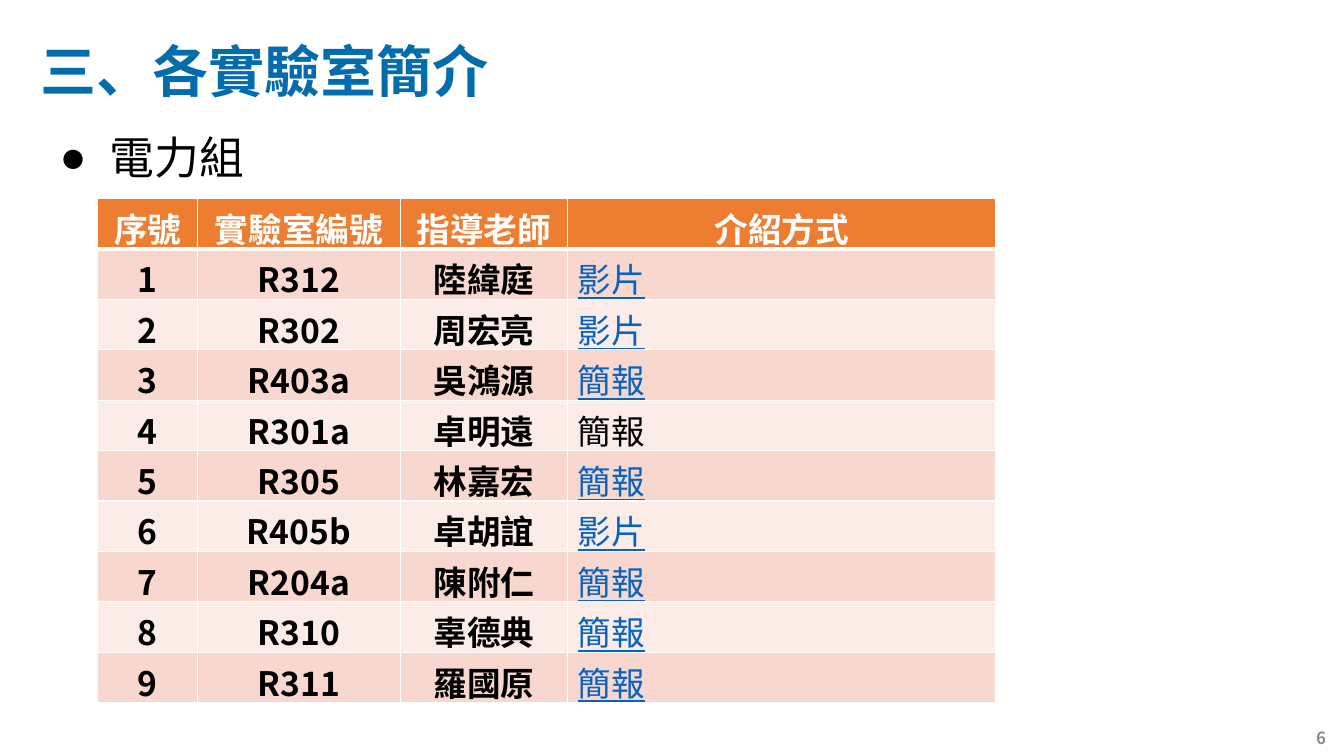
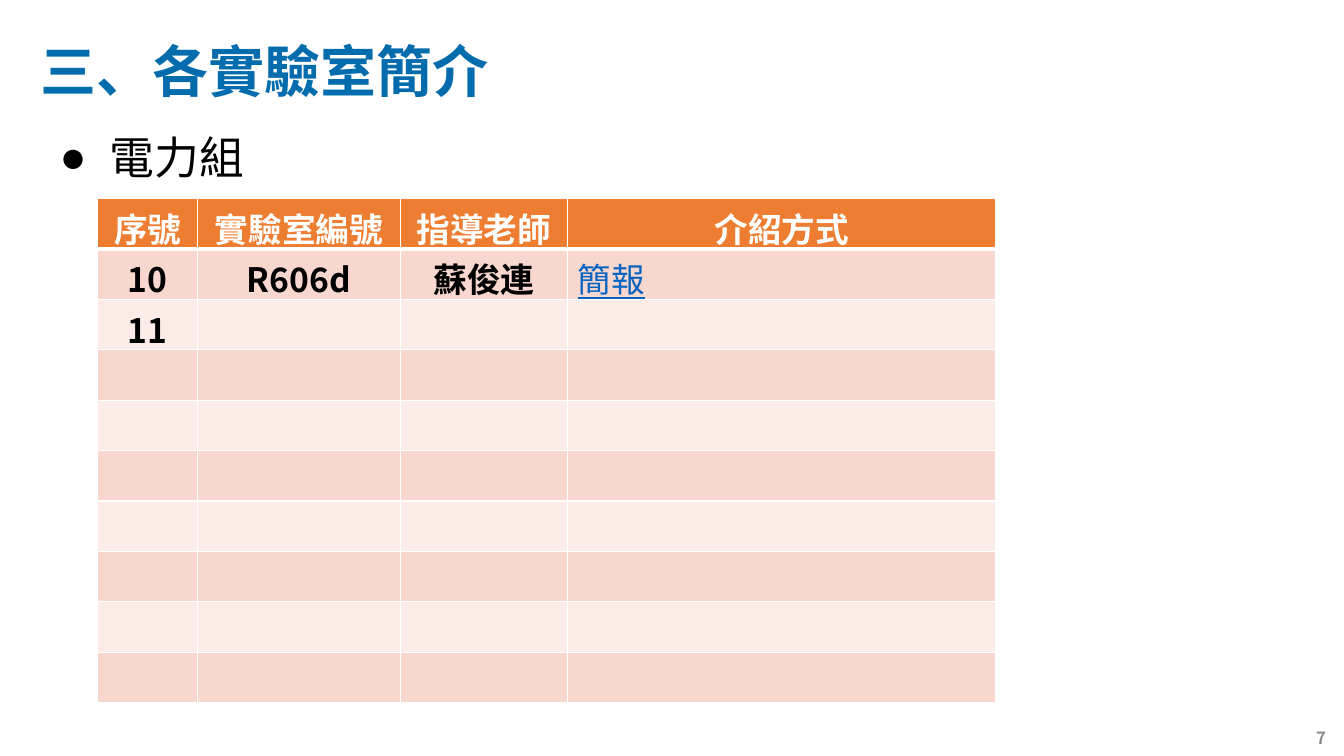
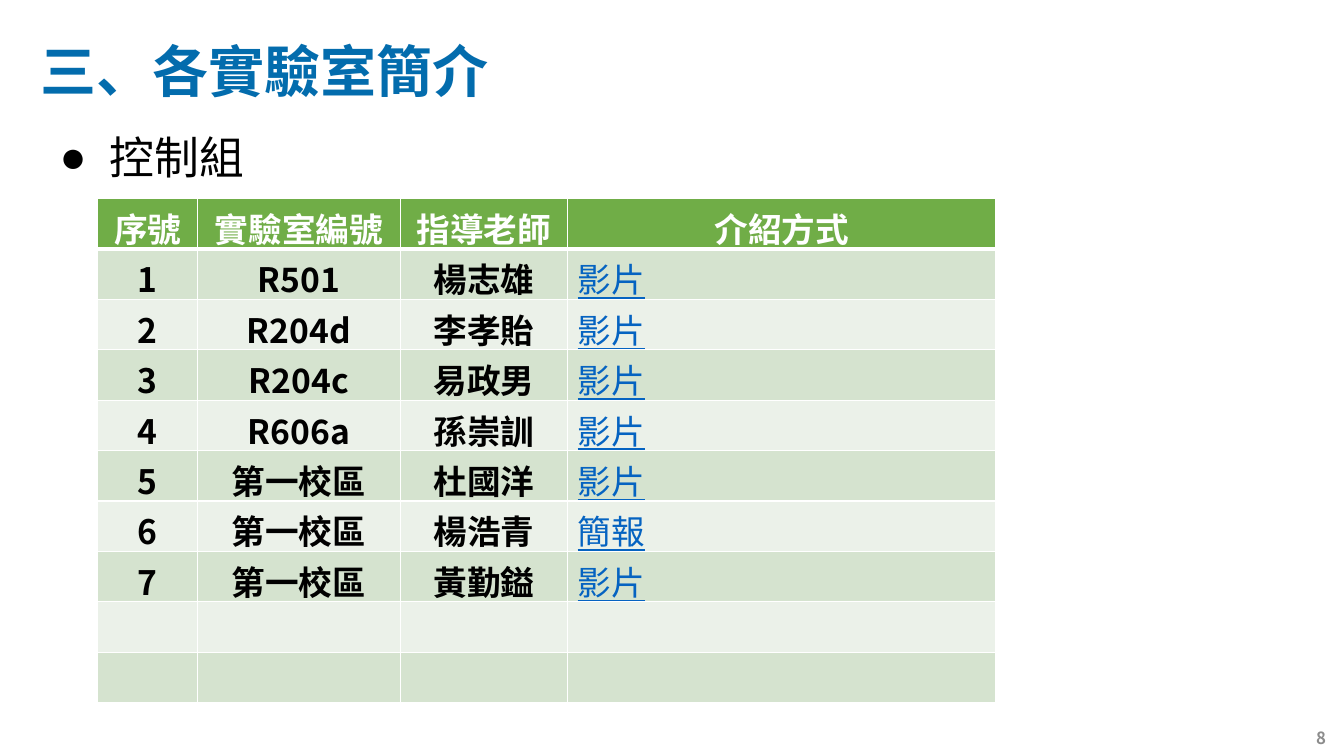
from dataclasses import dataclass

from lxml import etree
from pptx import Presentation
from pptx import util as u
from pptx.dml.color import RGBColor
from pptx.enum import text
from pptx.oxml.ns import qn


@dataclass(frozen=True)
class Theme:
    font: str = "Noto Sans CJK SC"
    title: str = "036CAD"
    ink: str = "000000"
    link: str = "0563C1"
    number: str = "8C8C8C"
    white: str = "FFFFFF"
    orange: tuple = ("ED7D31", "F8D7CE", "FCECE8")  # header, odd row, even row
    green: tuple = ("70AD47", "D5E3CF", "EBF1E9")
    title_size: int = 40
    group_size: int = 32
    table_size: int = 24
    number_size: int = 12


# Left, top, width, height in percent of the slide
TITLE_BOX = (2.25, -0.27, 35.48, 13.2)
GROUP_BOX = (3.68, 16.53, 19.28, 8.53)
TABLE_BOX = (7.28, 26.27, 66.84, 66.67)
NUMBER_BOX = (76.89, 94.93, 22.51, 5.33)
COLUMNS = (7.43, 15.08, 12.45, 31.88)
ROW_COUNT = 10

TITLE = "三、各實驗室簡介"
HEADER = ("序號", "實驗室編號", "指導老師", "介紹方式")
VIDEO, DECK = "影片", "簡報"
POWER = (
    ("R312", "陸緯庭", VIDEO), ("R302", "周宏亮", VIDEO),
    ("R403a", "吳鴻源", DECK), ("R301a", "卓明遠", DECK),
    ("R305", "林嘉宏", DECK), ("R405b", "卓胡誼", VIDEO),
    ("R204a", "陳附仁", DECK), ("R310", "辜德典", DECK),
    ("R311", "羅國原", DECK),
)
POWER_MORE = (("R606d", "蘇俊連", DECK), ("", "", ""))
CONTROL = (
    ("R501", "楊志雄", VIDEO), ("R204d", "李孝貽", VIDEO),
    ("R204c", "易政男", VIDEO), ("R606a", "孫崇訓", VIDEO),
    ("第一校區", "杜國洋", VIDEO), ("第一校區", "楊浩青", DECK),
    ("第一校區", "黃勤鎰", VIDEO),
)


class Deck:
    def __init__(self, theme):
        self.t = theme
        self.prs = Presentation()
        self.prs.slide_width = u.Inches(13.33)
        self.prs.slide_height = u.Inches(7.5)
        self.s = None

    def x(self, share):
        return u.Emu(round(self.prs.slide_width * share / 100))

    def y(self, share):
        return u.Emu(round(self.prs.slide_height * share / 100))

    def box(self, shares):
        left, top, width, height = shares
        return self.x(left), self.y(top), self.x(width), self.y(height)

    def place(self, sp, shares):
        for name, value in zip(("left", "top", "width", "height"), self.box(shares)):
            setattr(sp, name, value)

    def put_text(self, tf, words, size, color, align=text.PP_ALIGN.LEFT, **style):
        """Fill the first paragraph; style holds further font attributes."""
        p = tf.paragraphs[0]
        p.alignment = align
        p.space_before = u.Pt(0)
        r = p.add_run()
        r.text = words
        fmt = {"name": self.t.font, "size": u.Pt(size), "bold": False, **style}
        for name, value in fmt.items():
            setattr(r.font, name, value)
        r.font.color.rgb = RGBColor.from_string(color)
        latin = r._r.rPr.find(qn("a:latin"))
        east = etree.Element(qn("a:ea"), typeface=self.t.font)
        latin.addnext(east)
        return p

    def frame(self, sp, anchor=text.MSO_ANCHOR.TOP, fit=text.MSO_AUTO_SIZE.SHAPE_TO_FIT_TEXT):
        tf = sp.text_frame
        for name, value in {"word_wrap": True, "auto_size": fit,
                            "vertical_anchor": anchor}.items():
            setattr(tf, name, value)
        return tf

    def slide(self, title, group, number):
        self.s = self.prs.slides.add_slide(self.prs.slide_layouts[1])
        self.title(title)
        self.group(group)
        self.number(number)

    def title(self, words):
        sp = self.s.shapes.title
        self.place(sp, TITLE_BOX)
        p = self.put_text(self.frame(sp), words, self.t.title_size, self.t.title, bold=True)
        p.line_spacing = 1.5

    def group(self, words):
        sp = self.s.placeholders[1]
        self.place(sp, GROUP_BOX)
        p = self.put_text(self.frame(sp), words, self.t.group_size, self.t.ink)
        pPr = p._p.get_or_add_pPr()
        indent = u.Inches(0.5)
        pPr.set("marL", str(indent))
        pPr.set("indent", str(-indent))
        etree.SubElement(pPr, qn("a:buChar"), char="●")

    def number(self, number):
        sp = self.s.shapes.add_textbox(*self.box(NUMBER_BOX))
        tf = self.frame(sp, text.MSO_ANCHOR.MIDDLE, text.MSO_AUTO_SIZE.NONE)
        self.put_text(tf, str(number), self.t.number_size, self.t.number,
                      text.PP_ALIGN.RIGHT, bold=True)

    def borders(self, cell, row):
        """White rules, thicker between the header and the first row."""
        tcPr = cell._tc.get_or_add_tcPr()
        widths = {"L": 1, "R": 1, "T": 3 if row == 1 else 1, "B": 3 if row == 0 else 1}
        for side, width in widths.items():
            ln = etree.SubElement(tcPr, qn(f"a:ln{side}"), w=str(u.Pt(width)))
            fill = etree.SubElement(ln, qn("a:solidFill"))
            etree.SubElement(fill, qn("a:srgbClr"), val=self.t.white)

    def table(self, labs, colors, first=1, unlinked=()):
        """Number the labs from first; unlinked lists numbers shown without link style."""
        rows = [HEADER] + [(str(n), *lab) for n, lab in enumerate(labs, first)]
        rows += [("",) * len(COLUMNS)] * (ROW_COUNT - len(rows))
        table = self.s.shapes.add_table(ROW_COUNT, len(COLUMNS), *self.box(TABLE_BOX)).table
        table.horz_banding = False
        for column, share in zip(table.columns, COLUMNS):
            column.width = self.x(share)
        header, odd, even = colors
        for i, row in enumerate(rows):
            fill = header if i == 0 else odd if i % 2 else even
            for j, words in enumerate(row):
                cell = table.cell(i, j)
                cell.margin_bottom = 0
                self.borders(cell, i)
                cell.fill.solid()
                cell.fill.fore_color.rgb = RGBColor.from_string(fill)
                if not words:
                    continue
                is_mode = i > 0 and j == len(COLUMNS) - 1
                linked = is_mode and int(row[0]) not in unlinked
                color = self.t.white if i == 0 else self.t.link if linked else self.t.ink
                align = text.PP_ALIGN.LEFT if is_mode else text.PP_ALIGN.CENTER
                self.put_text(cell.text_frame, words, self.t.table_size, color, align,
                              bold=not is_mode, underline=linked)


def main():
    theme = Theme()
    deck = Deck(theme)
    deck.slide(TITLE, "電力組", 6)
    deck.table(POWER, theme.orange, unlinked=(4,))
    deck.slide(TITLE, "電力組", 7)
    deck.table(POWER_MORE, theme.orange, first=len(POWER) + 1)
    deck.slide(TITLE, "控制組", 8)
    deck.table(CONTROL, theme.green)
    deck.prs.save("out.pptx")


if __name__ == "__main__":
    main()
